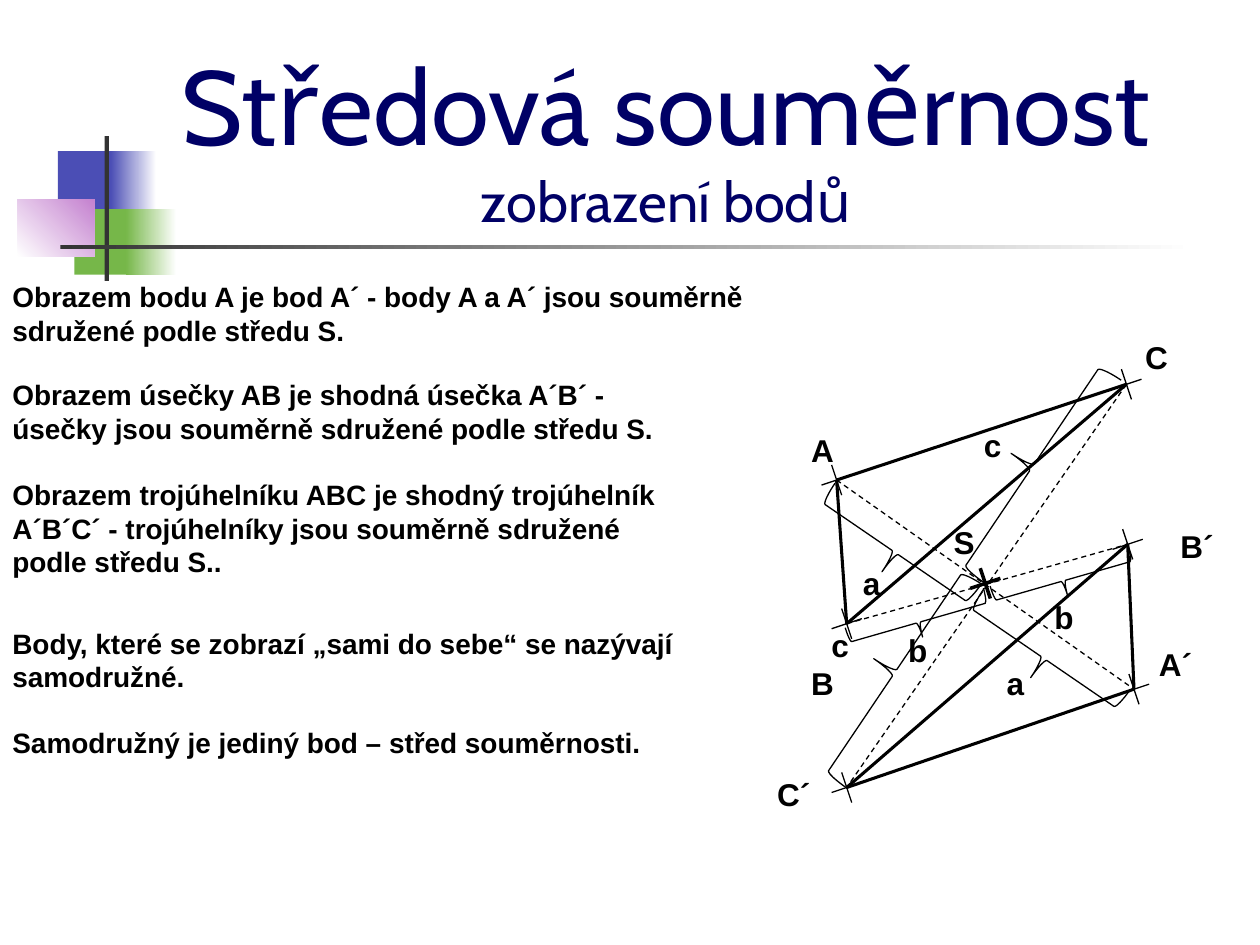
from lxml import etree
from pptx import Presentation
from pptx import util as u
from pptx.dml.color import RGBColor
from pptx.enum import dml, shapes, text
from pptx.oxml.ns import qn

COLUMNS, ROWS = 100, 75  # square grid cells over the whole slide


def colour(value):
    return RGBColor.from_string(value)


class Board:
    """Style and current slide; lengths are grid columns and rows."""
    ink, heading, rule = "000000", "000066", "333333"
    body_font, title_font = "Arial", "Cabin"

    def __init__(self, deck):
        self.cell_w = deck.slide_width / COLUMNS
        self.cell_h = deck.slide_height / ROWS
        self.page = deck.slides.add_slide(deck.slide_layouts[6])

    def place(self, left, top, width, height):
        return [u.Emu(round(length * cell)) for length, cell in zip(
            (left, top, width, height), (self.cell_w, self.cell_h) * 2)]

    def block(self, area, start, end=None, angle=0):
        shape = self.page.shapes.add_shape(
            shapes.MSO_SHAPE.RECTANGLE, *self.place(*area))
        shape.shadow.inherit = False
        shape.line.fill.background()
        if end is None:
            shape.fill.solid()
            shape.fill.fore_color.rgb = colour(start)
        else:
            shape.fill.gradient()
            shape.fill.gradient_angle = angle
            for stop, value in zip(shape.fill.gradient_stops, (start, end)):
                stop.color.rgb = colour(value)

    def brace(self, centre, width, length, rotation):
        x, y = centre
        shape = self.page.shapes.add_shape(
            shapes.MSO_SHAPE.LEFT_BRACE,
            *self.place(x - width / 2, y - length / 2, width, length))
        shape.rotation = rotation
        shape.shadow.inherit = False
        shape.fill.background()
        shape.line.color.rgb = colour(self.ink)
        shape.line.width = u.Pt(0.75)

    def line(self, start, end, weight=0.75, dashed=False):
        line = self.page.shapes.add_connector(
            shapes.MSO_CONNECTOR.STRAIGHT, *self.place(*start, *end))
        line.line.color.rgb = colour(self.ink)
        line.line.width = u.Pt(weight)
        if dashed:
            line.line.dash_style = dml.MSO_LINE.DASH
        etree.SubElement(line._element.spPr, qn("a:effectLst"))

    def cross(self, centre, weight=0.75):
        x, y = centre
        for dx, dy in ((0.4, 1.2), (1.2, -0.4)):
            self.line((x - dx, y - dy), (x + dx, y + dy), weight)

    def words(self, area, lines, value, font, bold=False, centred=False):
        box = self.page.shapes.add_textbox(*self.place(*area))
        frame = box.text_frame
        frame.word_wrap = True
        if centred:
            frame.vertical_anchor = text.MSO_ANCHOR.MIDDLE
        for number, (wording, size) in enumerate(lines):
            para = frame.add_paragraph() if number else frame.paragraphs[0]
            para.alignment = (text.PP_ALIGN.CENTER if centred
                              else text.PP_ALIGN.LEFT)
            span = para.add_run()
            span.text = wording
            span.font.size = u.Pt(size)
            span.font.name = font
            span.font.bold = bold
            span.font.color.rgb = colour(value)

    def title(self, area, *lines):
        self.words(area, lines, self.heading, self.title_font, centred=True)

    def note(self, area, wording, size=16):
        self.words(area, [(wording, size)], self.ink, self.body_font,
                   bold=True)

    def label(self, left, top, wording):
        self.note((left, top, 5.3, 4), wording, 18)


def main():
    deck = Presentation()
    deck.slide_width, deck.slide_height = u.Inches(10), u.Inches(7.5)
    board = Board(deck)

    # Corner ornament and rule
    board.block((4.6, 12, 4.8, 5.2), "4B4EB5")
    board.block((8.8, 12, 3.6, 5.2), "4B4EB5", "FFFFFF")
    board.block((5.9, 16.6, 4.6, 5.2), "76B749")
    board.block((10, 16.6, 4, 5.2), "76B749", "FFFFFF")
    board.block((1.4, 15.8, 6.1, 4.6), "FFFFFF", "C481CF", 45)
    board.block((8.3, 10.8, 0.35, 11.5), board.rule)
    board.block((4.8, 19.45, 90, 0.35), board.rule, "FFFFFF")

    # Title and statements
    board.title((7.7, 2.9, 90.3, 16),
                ("Středová souměrnost", 60), ("zobrazení bodů", 32))
    for top, width, height, wording in (
        (21.7, 65.3, 6.4, "Obrazem bodu A je bod A´ - body A a A´ jsou "
                          "souměrně sdružené podle středu S."),
        (29.5, 54.3, 6.4, "Obrazem úsečky AB je shodná úsečka A´B´ - "
                          "úsečky jsou souměrně sdružené podle středu S."),
        (37.4, 53.1, 9.1, "Obrazem trojúhelníku ABC je shodný trojúhelník "
                          "A´B´C´ - trojúhelníky jsou souměrně sdružené "
                          "podle středu S.."),
        (49.2, 54.6, 6.4, "Body, které se zobrazí „sami do sebe“ se "
                          "nazývají samodružné."),
        (57.1, 61.9, 3.7, "Samodružný je jediný bod – střed souměrnosti."),
    ):
        board.note((0, top, width, height), wording)

    # Points, each with its image, and the centre
    a, a_image = (66.4, 38.1), (90, 54.7)
    b, b_image = (67.2, 49.5), (89.5, 43.2)
    c, c_image = (89.4, 30.5), (67.2, 62.5)
    centre = (78.2, 46.3)
    for point, image in ((a, a_image), (b, b_image), (c, c_image)):
        board.line(point, image, dashed=True)
        board.cross(point)
        board.cross(image)
    board.cross(centre, 2)

    # Equal distances from the centre
    for width, length, rotation, middles in (
        (3.7, 14.1, 304.4, ((71.05, 43.85), (82.85, 52.25))),
        (2.4, 11.4, 254, ((72.9, 49.4), (84.4, 46.1))),
        (4, 19.4, 34, ((71, 53.4), (81.9, 37.1))),
    ):
        for middle in middles:
            board.brace(middle, width, length, rotation)

    # Triangle and its image
    for corners in ((a, b, c), (a_image, b_image, c_image)):
        for start, end in zip(corners, corners[1:] + corners[:1]):
            board.line(start, end, 1.75)

    # Labels
    for left, top, wording in (
        (63.4, 33.7, "A"), (91, 50.7, "A´"), (63.4, 52.2, "B"),
        (92.7, 41.3, "B´"), (89.9, 26.3, "C"), (60.7, 61, "C´"),
        (74.7, 41, "S"), (67.5, 44.3, "a"), (78.9, 52.2, "a"),
        (71.1, 49.6, "b"), (82.7, 47, "b"), (65, 49.2, "c"),
        (77.1, 33.3, "c"),
    ):
        board.label(left, top, wording)

    deck.save("out.pptx")


if __name__ == "__main__":
    main()
